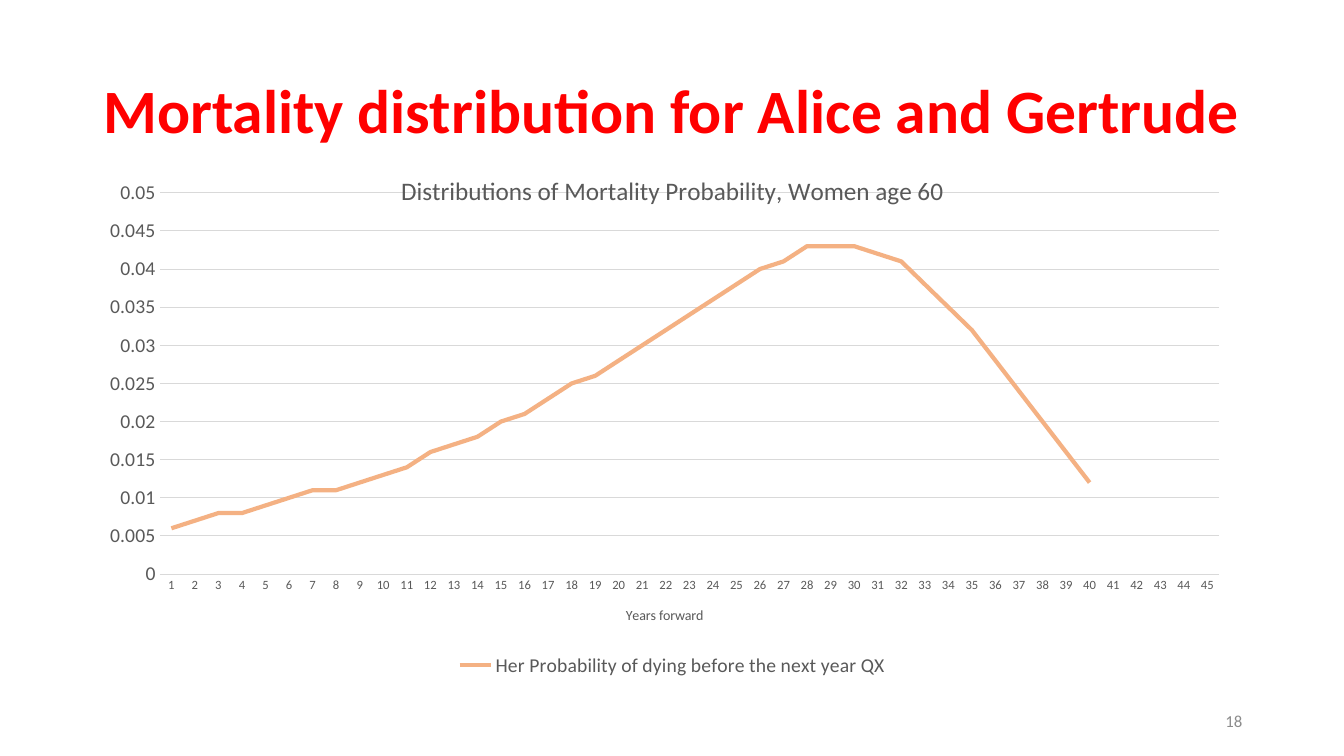
from lxml import etree
from pptx import Presentation
from pptx.chart.data import CategoryChartData
from pptx.dml.color import RGBColor
from pptx.enum.chart import XL_CHART_TYPE, XL_LEGEND_POSITION, XL_MARKER_STYLE, XL_TICK_MARK
from pptx.enum.text import MSO_ANCHOR, PP_ALIGN
from pptx.oxml.ns import qn
from pptx.util import Inches, Pt

RED = RGBColor(0xFF, 0x00, 0x00)
GRAY = RGBColor(0x59, 0x59, 0x59)
PALE = RGBColor(0x8C, 0x8C, 0x8C)
RULE = RGBColor(0xD9, 0xD9, 0xD9)
PEACH = RGBColor(0xF4, 0xB1, 0x83)
LINE = XL_CHART_TYPE.LINE
BOTTOM = XL_LEGEND_POSITION.BOTTOM
NO_TICK = XL_TICK_MARK.NONE
NO_MARK = XL_MARKER_STYLE.NONE
CENTER, RIGHT = PP_ALIGN.CENTER, PP_ALIGN.RIGHT
MIDDLE = MSO_ANCHOR.MIDDLE
FACE = "Calibri"
WIDTH, HEIGHT = Inches(13.33), Inches(7.5)
YEARS = 45
ODDS = [
    0.006, 0.007, 0.008, 0.008, 0.009, 0.01, 0.011, 0.011, 0.012, 0.013,
    0.014, 0.016, 0.017, 0.018, 0.02, 0.021, 0.023, 0.025, 0.026, 0.028,
    0.03, 0.032, 0.034, 0.036, 0.038, 0.04, 0.041, 0.043, 0.043, 0.043,
    0.042, 0.041, 0.038, 0.035, 0.032, 0.028, 0.024, 0.02, 0.016, 0.012,
]


def style(font, size, color=GRAY, bold=False):
    """Set the face, size, colour and weight of a font."""
    font.name, font.size, font.bold = FACE, Pt(size), bold
    font.color.rgb = color


def write(frame, text, align=CENTER, space=None, **look):
    """Put one formatted line of text in a frame."""
    frame.text = text
    line = frame.paragraphs[0]
    line.alignment = align
    line.line_spacing = space
    style(line.runs[0].font, **look)


def stroke(line, color, width):
    """Colour a line and set its width in points."""
    line.color.rgb = color
    line.width = Pt(width)


def place(left, top, width, height):
    """Turn percentages of the slide into lengths."""
    return [int(part * side / 100) for part, side in
            zip((left, top, width, height), (WIDTH, HEIGHT) * 2)]


class Page:
    """Holds the current slide and adds styled elements to it."""

    def __init__(self, deck):
        self.slide = deck.slides.add_slide(deck.slide_layouts[5])

    def title(self, text, box):
        """Move and fill the title placeholder."""
        head = self.slide.shapes.title
        head.left, head.top, head.width, head.height = place(*box)
        head.text_frame.word_wrap = True
        head.text_frame.vertical_anchor = MIDDLE
        write(head.text_frame, text, space=0.9, size=44, color=RED, bold=True)

    def label(self, text, box, **look):
        """Add a text box."""
        frame = self.slide.shapes.add_textbox(*place(*box)).text_frame
        frame.word_wrap = True
        frame.vertical_anchor = MIDDLE
        write(frame, text, **look)

    def curve(self, head, foot, name, values, box, plot):
        """Add a line chart with its titles, axes and legend."""
        data = CategoryChartData()
        data.categories = [str(year) for year in range(1, YEARS + 1)]
        data.add_series(name, values + [None] * (YEARS - len(values)))
        chart = self.slide.shapes.add_chart(LINE, *place(*box), data).chart
        style(chart.font, 10)
        write(chart.chart_title.text_frame, head, size=18)
        chart.chart_title.include_in_layout = True
        self.axes(chart, foot)
        chart.has_legend = True
        chart.legend.position = BOTTOM
        chart.legend.include_in_layout = False
        style(chart.legend.font, 14)
        chart.plots[0].vary_by_categories = False
        series = chart.plots[0].series[0]
        series.smooth = False
        series.marker.style = NO_MARK
        stroke(series.format.line, PEACH, 3)
        self.frame(chart, plot)

    def axes(self, chart, foot):
        """Format both axes and the grid."""
        years, odds = chart.category_axis, chart.value_axis
        for axis, size in ((years, 9), (odds, 14)):
            axis.major_tick_mark = axis.minor_tick_mark = NO_TICK
            style(axis.tick_labels.font, size)
        write(years.axis_title.text_frame, foot, size=10)
        stroke(years.format.line, RULE, 0.75)
        odds.minimum_scale, odds.maximum_scale, odds.major_unit = 0, 0.05, 0.005
        odds.tick_labels.number_format = "General"
        odds.tick_labels.number_format_is_linked = False
        odds.format.line.fill.background()
        stroke(odds.major_gridlines.format.line, RULE, 0.75)

    def frame(self, chart, plot):
        """Fix the inner plot area as shares of the chart."""
        area = chart.plots[0]._element.getparent()
        for old in area.findall(qn("c:layout")):
            area.remove(old)
        layout = etree.Element(qn("c:layout"))
        manual = etree.SubElement(layout, qn("c:manualLayout"))
        marks = {"layoutTarget": "inner", "xMode": "edge", "yMode": "edge"}
        marks.update(zip("xywh", plot))
        for tag, value in marks.items():
            etree.SubElement(manual, qn("c:" + tag)).set("val", str(value))
        area.insert(0, layout)


def main():
    """Build the slide and save it."""
    deck = Presentation()
    deck.slide_width, deck.slide_height = WIDTH, HEIGHT
    page = Page(deck)
    page.title("Mortality distribution for Alice and Gertrude",
               (6.88, 5.33, 86.25, 19.33))
    page.label("18", (70.67, 92.67, 22.5, 5.33), align=RIGHT, size=12, color=PALE)
    page.curve("Distributions of Mortality Probability, Women age 60",
               "Years forward", "Her Probability of dying before the next year QX",
               ODDS, (8.1, 20.27, 83.87, 69.87), (0.045, 0.075, 0.94, 0.722))
    deck.save("out.pptx")


if __name__ == "__main__":
    main()
